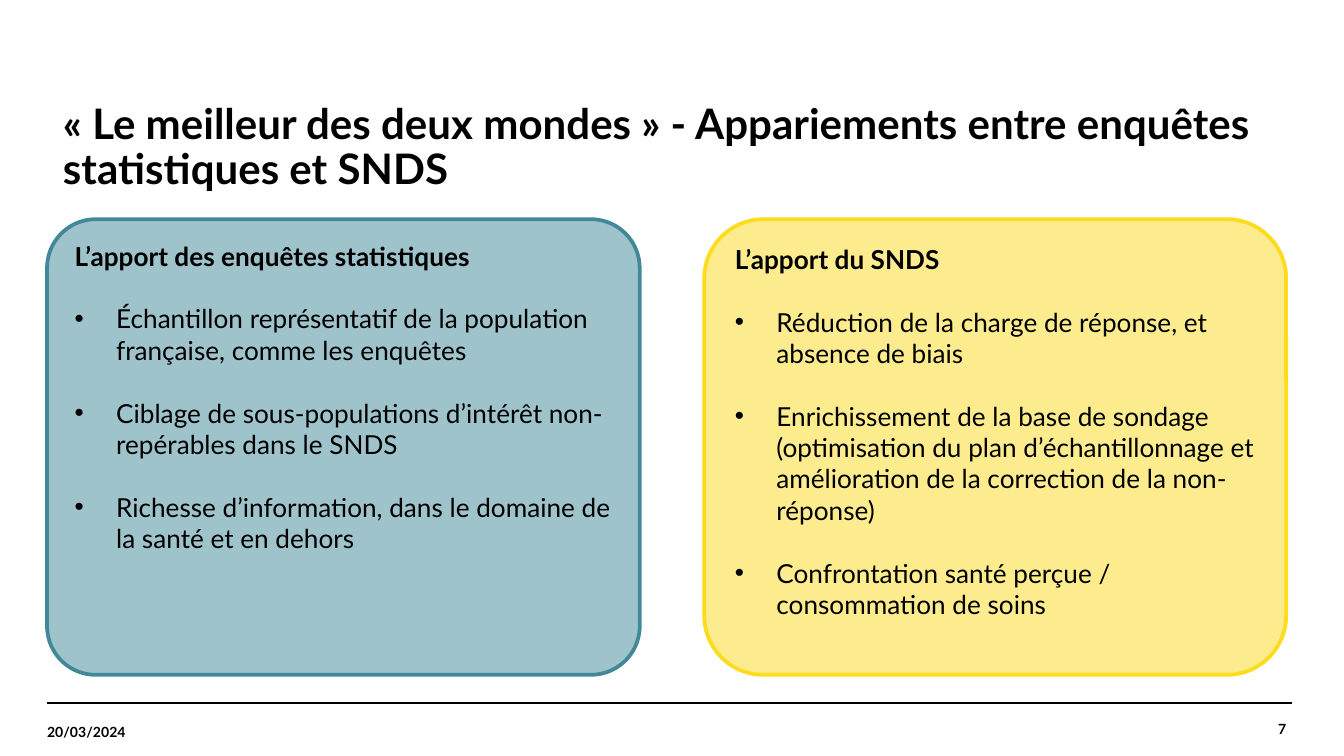
from dataclasses import dataclass

from lxml import etree
from pptx import Presentation
from pptx.dml.color import RGBColor
from pptx.enum.shapes import MSO_CONNECTOR, MSO_SHAPE
from pptx.enum.text import MSO_ANCHOR, PP_ALIGN
from pptx.oxml.ns import qn
from pptx.util import Inches, Pt

STRAIGHT = MSO_CONNECTOR.STRAIGHT
ROUNDED = MSO_SHAPE.ROUNDED_RECTANGLE
TOP, MIDDLE = MSO_ANCHOR.TOP, MSO_ANCHOR.MIDDLE
LEFT, RIGHT = PP_ALIGN.LEFT, PP_ALIGN.RIGHT
SLIDE_WIDTH = Inches(10)
SLIDE_HEIGHT = SLIDE_WIDTH * 9 // 16


@dataclass(frozen=True)
class Theme:
    """Colours, font and sizes in points."""
    font: str = "Lato"
    ink: str = "000000"
    survey: str = "418998"
    health_data: str = "FDDB1D"
    title_size: float = 22.5
    body_size: float = 14
    footer_size: float = 7.5
    paragraph_gap: float = 16.8
    border: float = 2
    rule: float = 0.8


THEME = Theme()


@dataclass(frozen=True)
class Box:
    """An area in percent of the slide's width and height."""
    left: float
    top: float
    width: float
    height: float

    def emu(self):
        """Return left, top, width and height as slide lengths."""
        return (across(self.left), down(self.top),
                across(self.width), down(self.height))


def across(percent):
    """Convert a percentage of the slide's width to a length."""
    return round(SLIDE_WIDTH * percent / 100)


def down(percent):
    """Convert a percentage of the slide's height to a length."""
    return round(SLIDE_HEIGHT * percent / 100)


def write(paragraph, text, size, bold=False, align=LEFT, indent=0, bullet=False,
          gap=0, line_spacing=None):
    """Put formatted text into a paragraph."""
    properties = paragraph._p.get_or_add_pPr()
    properties.set("marL", str(across(indent)))
    properties.set("indent", str(-across(indent) if bullet else 0))
    paragraph.alignment = align
    if line_spacing:
        paragraph.line_spacing = line_spacing
    if gap:
        paragraph.space_before = Pt(gap)
    if bullet:
        etree.SubElement(properties, qn("a:buFont"), typeface="Arial")
        etree.SubElement(properties, qn("a:buChar"), char="•")
    paragraph.text = text
    font = paragraph.font
    font.name, font.size, font.bold = THEME.font, Pt(size), bold
    font.color.rgb = RGBColor.from_string(THEME.ink)


def add_label(slide, box, text, margin=None, **text_format):
    """Add a vertically centred text box."""
    frame = slide.shapes.add_textbox(*box.emu()).text_frame
    frame.word_wrap = True
    frame.vertical_anchor = MIDDLE
    if margin is not None:
        frame.margin_left = frame.margin_right = margin
        frame.margin_top = frame.margin_bottom = margin
    write(frame.paragraphs[0], text, bold=True, **text_format)


def add_title(slide, box, text):
    """Add the slide's heading."""
    add_label(slide, box, text, size=THEME.title_size, indent=0.2, line_spacing=0.9)


def add_panel(slide, box, color, corner, heading, points):
    """Add a rounded panel with a heading and a bulleted list."""
    shape = slide.shapes.add_shape(ROUNDED, *box.emu())
    shape.shadow.inherit = False
    shape.adjustments[0] = corner
    shape.fill.solid()
    shape.fill.fore_color.rgb = RGBColor.from_string(color)
    fill_color = shape._element.spPr.find(qn("a:solidFill"))[0]
    etree.SubElement(fill_color, qn("a:alpha"), val="50000")
    shape.line.color.rgb = RGBColor.from_string(color)
    shape.line.width = Pt(THEME.border)
    frame = shape.text_frame
    frame.word_wrap = True
    frame.vertical_anchor = TOP
    write(frame.paragraphs[0], heading, THEME.body_size, bold=True)
    for point in points:
        write(frame.add_paragraph(), point, THEME.body_size, indent=3.1,
              bullet=True, gap=THEME.paragraph_gap)


def add_footer(slide, box, date, number):
    """Add a double rule along the top of the box, with date and page number below."""
    _, top, width, _ = box.emu()
    for start in (across(box.left), across(box.left + 0.4)):
        rule = slide.shapes.add_connector(STRAIGHT, start, top, start + width, top)
        rule.line.color.rgb = RGBColor.from_string(THEME.ink)
        rule.line.width = Pt(THEME.rule)
        etree.SubElement(rule._element.spPr, qn("a:effectLst"))
    date_box = Box(box.left, box.top + 0.4, 12.8, box.height - 0.2)
    number_box = Box(box.left + box.width - 14.8, box.top, 14.8, box.height)
    add_label(slide, number_box, number, margin=0, size=THEME.footer_size, align=RIGHT)
    add_label(slide, date_box, date, margin=0, size=THEME.footer_size)


def main():
    """Build and save the presentation."""
    presentation = Presentation()
    presentation.slide_width, presentation.slide_height = SLIDE_WIDTH, SLIDE_HEIGHT
    slide = presentation.slides.add_slide(presentation.slide_layouts[6])
    add_footer(slide, Box(3.5, 93, 92.2, 6.93), "20/03/2024", "7")
    add_title(slide, Box(3.5, 14.4, 92.1, 10.5),
              "« Le meilleur des deux mondes » - Appariements entre enquêtes "
              "statistiques et SNDS")
    add_panel(slide, Box(52.4, 29, 43.3, 60.27), THEME.health_data, 0.13,
              "L’apport du SNDS",
              ["Réduction de la charge de réponse, et absence de biais",
               "Enrichissement de la base de sondage (optimisation du plan "
               "d’échantillonnage et amélioration de la correction de la non-réponse)",
               "Confrontation santé perçue / consommation de soins"])
    add_panel(slide, Box(3.5, 29, 44.1, 60.27), THEME.survey, 0.107,
              "L’apport des enquêtes statistiques",
              ["Échantillon représentatif de la population française, comme les enquêtes",
               "Ciblage de sous-populations d’intérêt non-repérables dans le SNDS",
               "Richesse d’information, dans le domaine de la santé et en dehors"])
    presentation.save("out.pptx")


if __name__ == "__main__":
    main()
